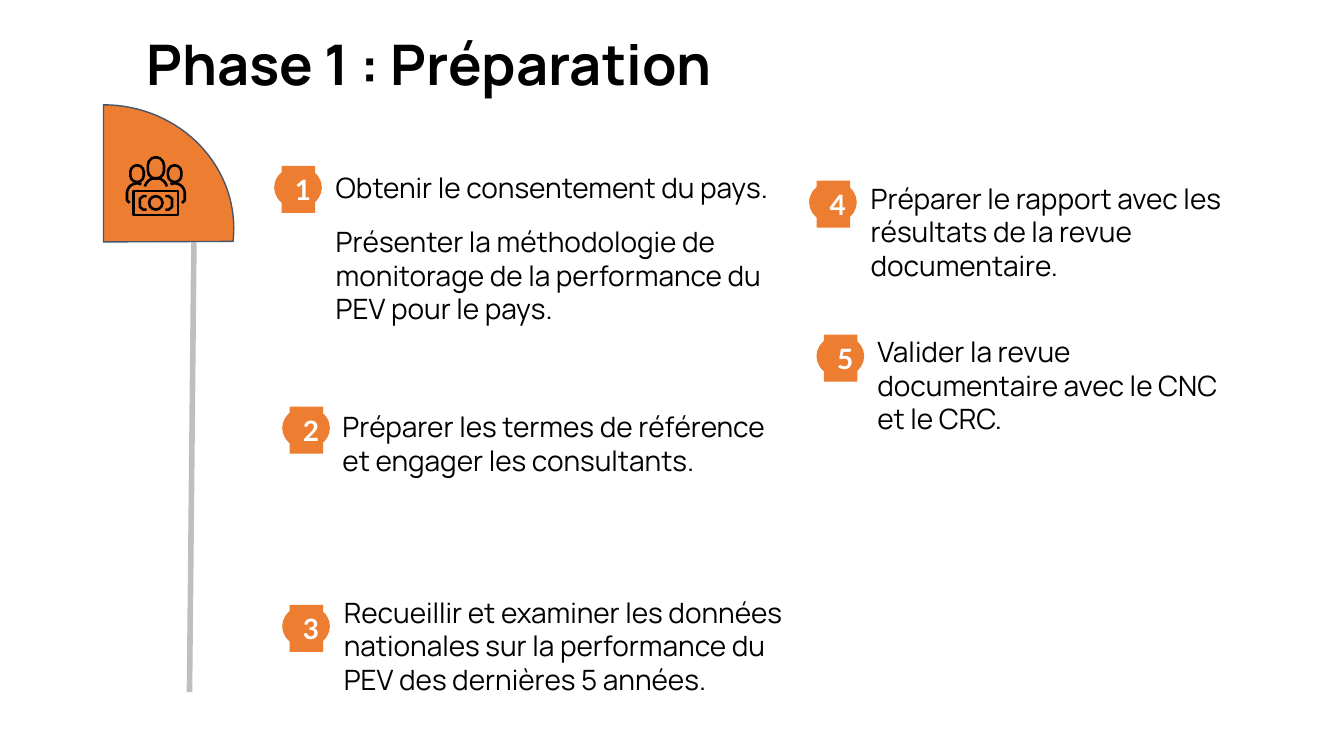
import math

from lxml import etree
from pptx import Presentation
from pptx import util as u
from pptx.dml.color import RGBColor
from pptx.enum import shapes, text
from pptx.oxml.ns import qn

EMU_PER_PX = 4572  # 200 px to the inch
ORANGE, BLACK, WHITE, GREY, SLATE = "ED7D31", "000000", "FFFFFF", "808080", "44546A"
SHAPE = shapes.MSO_SHAPE


def px(*lengths):
    return [u.Emu(round(length * EMU_PER_PX)) for length in lengths]


def color(hex_string):
    return RGBColor.from_string(hex_string)


def arc(center_x, center_y, radius_x, radius_y, start, end, steps=32):
    """Points along an ellipse, in degrees clockwise from the right."""
    angles = [math.radians(start + (end - start) * i / steps) for i in range(steps + 1)]
    return [(center_x + radius_x * math.cos(a), center_y + radius_y * math.sin(a))
            for a in angles]


class SlideBuilder:
    body_font, number_font = "Manrope", "Lato"
    body_size, title_size = 15, 30

    def __init__(self, slide):
        self.slide = slide
        self.shapes = slide.shapes

    def style_text(self, paragraph, font, size, fill, bold=False):
        paragraph.font.name = font
        paragraph.font.size = u.Pt(size)
        paragraph.font.bold = bold
        paragraph.font.color.rgb = color(fill)

    def paint(self, shape, fill=None, line=None, weight=0.75):
        shape.shadow.inherit = False
        if fill:
            shape.fill.solid()
            shape.fill.fore_color.rgb = color(fill)
        else:
            shape.fill.background()
        if line:
            shape.line.color.rgb = color(line)
            shape.line.width = u.Pt(weight)
        else:
            shape.line.fill.background()

    def title(self, wording, left, top, width, height):
        shape = self.shapes.title
        shape.left, shape.top, shape.width, shape.height = px(left, top, width, height)
        frame = shape.text_frame
        frame.text = wording
        frame.auto_size = text.MSO_AUTO_SIZE.NONE
        frame.vertical_anchor = text.MSO_ANCHOR.TOP
        paragraph = frame.paragraphs[0]
        paragraph.alignment = text.PP_ALIGN.LEFT
        paragraph.line_spacing = 0.9
        self.style_text(paragraph, self.body_font, self.title_size, BLACK, bold=True)

    def text_box(self, wordings, left, top, width, height):
        frame = self.shapes.add_textbox(*px(left, top, width, height)).text_frame
        frame.word_wrap = True
        frame.auto_size = text.MSO_AUTO_SIZE.SHAPE_TO_FIT_TEXT
        for index, wording in enumerate(wordings):
            paragraph = frame.add_paragraph() if index else frame.paragraphs[0]
            paragraph.text = wording
            if index:
                paragraph.space_before = u.Pt(11)
            self.style_text(paragraph, self.body_font, self.body_size, BLACK)

    def preset(self, kind, left, top, width, height, **paint):
        shape = self.shapes.add_shape(kind, *px(left, top, width, height))
        self.paint(shape, **paint)
        return shape

    def outline(self, points, close=False, **paint):
        points = [px(*point) for point in points]
        builder = self.shapes.build_freeform(*points[0])
        builder.add_line_segments(points[1:], close=close)
        self.paint(builder.convert_to_shape(), **paint)

    def badge(self, number, left, top):
        """Numbered square over a disc."""
        self.preset(SHAPE.OVAL, left, top, 71, 62, fill=ORANGE)
        square = self.preset(SHAPE.RECTANGLE, left + 11, top - 1, 50, 70, fill=ORANGE)
        frame = square.text_frame
        frame.text = str(number)
        frame.auto_size = text.MSO_AUTO_SIZE.SHAPE_TO_FIT_TEXT
        paragraph = frame.paragraphs[0]
        paragraph.alignment = text.PP_ALIGN.CENTER
        self.style_text(paragraph, self.number_font, self.body_size, WHITE, bold=True)

    def translucent_line(self, start, end, fill, weight, opacity):
        line = self.shapes.add_connector(
            shapes.MSO_CONNECTOR.STRAIGHT, *px(*start, *end))
        line.line.color.rgb = color(fill)
        line.line.width = u.Pt(weight)
        properties = line._element.spPr
        rgb = properties.find(".//" + qn("a:srgbClr"))
        etree.SubElement(rgb, qn("a:alpha"), val=str(opacity * 1000))
        etree.SubElement(properties, qn("a:effectLst"))

    def team_icon(self):
        """Three people behind a banknote."""
        axis = 232
        stroke = dict(line=BLACK, weight=1.4)
        for center, top, width, height in (
                (axis - 28, 246, 20, 25), (axis + 28, 246, 20, 25), (axis, 234, 24, 32)):
            head = self.preset(SHAPE.ROUNDED_RECTANGLE, center - width / 2, top,
                               width, height, **stroke)
            head.adjustments[0] = 0.5
        self.outline(arc(axis, 282, 17, 17, 195, 345), **stroke)
        self.preset(SHAPE.RECTANGLE, axis - 33, 284, 66, 36, **stroke)
        self.preset(SHAPE.OVAL, axis - 10, 292, 20, 20, **stroke)
        shoulder = arc(28, 288, 15, 15, -115, 0) + [(43, 298), (39, 302)]
        bracket = [(14, 292), (19, 292), (24, 296), (24, 308), (19, 312), (14, 312)]
        for side in (-1, 1):
            for points in (shoulder, bracket):
                self.outline([(axis + side * x, y) for x, y in points], **stroke)


# Number, badge corner, text box, paragraphs
STEPS = [
    (1, (408, 248), (480, 244, 694, 302), [
        "Obtenir le consentement du pays.",
        "Présenter la méthodologie de monitorage de la performance du PEV pour le pays."]),
    (2, (420, 606), (490, 600, 694, 172), [
        "Préparer les termes de référence et engager les consultants."]),
    (3, (420, 901), (492, 876, 712, 222), [
        "Recueillir et examiner les données nationales sur la performance du PEV "
        "des dernières 5 années."]),
    (4, (1204, 270), (1276, 260, 572, 172), [
        "Préparer le rapport avec les résultats de la revue documentaire."]),
    (5, (1215, 499), (1286, 488, 572, 172), [
        "Valider la revue documentaire avec le CNC et le CRC."]),
]


def main():
    presentation = Presentation()
    presentation.slide_width, presentation.slide_height = px(2000, 1125)
    title_only = presentation.slide_layouts[5]
    builder = SlideBuilder(presentation.slides.add_slide(title_only))

    builder.title("Phase 1 : Préparation", 198, 46, 1472, 122)
    builder.translucent_line((290, 214), (282, 1030), GREY, 3, 50)
    for number, corner, box, wordings in STEPS:
        builder.badge(number, *corner)
        builder.text_box(wordings, *box)
    quadrant = arc(154, 340, 194, 184, -90, 6) + [(154, 360)]
    builder.outline(quadrant, close=True, fill=ORANGE, line=SLATE)
    builder.team_icon()
    presentation.save("out.pptx")


if __name__ == "__main__":
    main()
